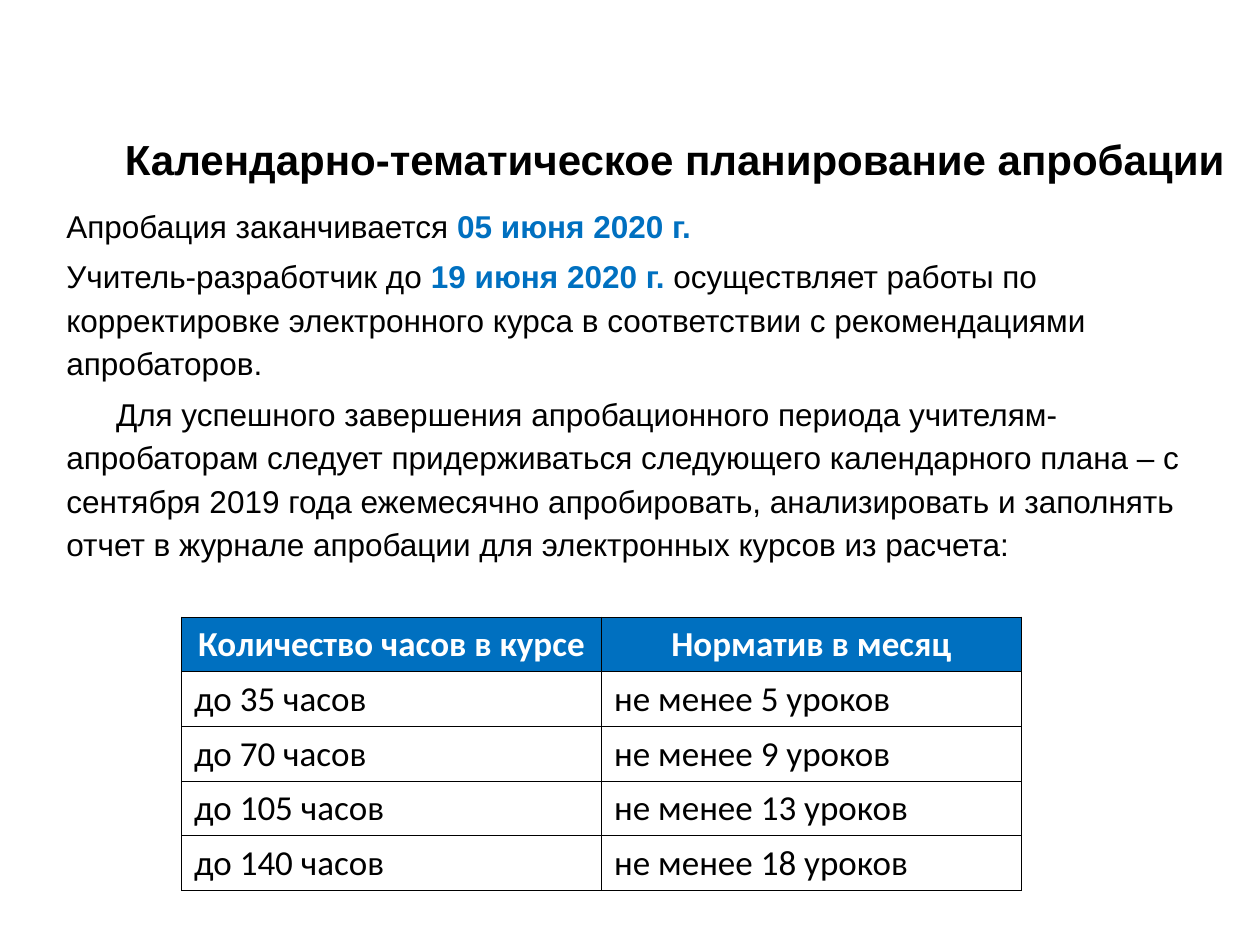
import pptx
import pptx.dml.color
import pptx.enum.text
import pptx.oxml.ns
import pptx.util
from dataclasses import dataclass
from lxml import etree

Cm, Pt = pptx.util.Cm, pptx.util.Pt
Align = pptx.enum.text.PP_ALIGN
Anchor = pptx.enum.text.MSO_ANCHOR


@dataclass(frozen=True)
class Theme:
    ink: str = "000000"
    blue: str = "0070C0"
    white: str = "FFFFFF"
    sans: str = "Arial"
    grid: str = "Calibri"
    head: int = 24
    body: int = 18
    cell: int = 20
    thin: float = 0.5
    thick: float = 1


THEME = Theme()
INDENT = Cm(1)

TITLE = "Календарно-тематическое планирование апробации"
# Each paragraph: first-line indent, then (text, is it a date) pieces
BODY = [
    (0, [("Апробация заканчивается ", False), ("05 июня 2020 г.", True)]),
    (0, [("Учитель-разработчик до ", False), ("19 июня 2020 г. ", True),
         ("осуществляет работы по корректировке электронного курса "
          "в соответствии с рекомендациями апробаторов.", False)]),
    (INDENT, [("Для успешного завершения апробационного периода учителям- "
               "апробаторам следует придерживаться следующего календарного "
               "плана – с сентября 2019 года ежемесячно апробировать, "
               "анализировать и заполнять отчет в журнале апробации для "
               "электронных курсов из расчета:", False)]),
]
ROWS = [
    ("Количество часов в курсе", "Норматив в месяц"),
    ("до 35 часов", "не менее 5 уроков"),
    ("до 70 часов", "не менее 9 уроков"),
    ("до 105 часов", "не менее 13 уроков"),
    ("до 140 часов", "не менее 18 уроков"),
]


def rgb(hue):
    return pptx.dml.color.RGBColor.from_string(hue)


def style(run, face, size, hue, bold=False):
    font = run.font
    font.name, font.size, font.bold = face, Pt(size), bold
    font.color.rgb = rgb(hue)


def add_frame(slide, box, pad):
    frame = slide.shapes.add_textbox(*box).text_frame
    frame.word_wrap = True
    frame.margin_top = frame.margin_bottom = pad
    return frame


def set_para(para, indent):
    para._p.get_or_add_pPr().set("indent", str(int(indent)))
    para.line_spacing = 1.15


def add_title(slide, box):
    frame = add_frame(slide, box, Cm(0.13))
    frame.vertical_anchor = Anchor.MIDDLE
    para = frame.paragraphs[0]
    para.text = TITLE
    set_para(para, INDENT)
    para.alignment = Align.CENTER
    style(para.runs[0], THEME.sans, THEME.head, THEME.ink, True)


def add_body(slide, box):
    frame = add_frame(slide, box, 0)
    for i, (indent, parts) in enumerate(BODY):
        para = frame.add_paragraph() if i else frame.paragraphs[0]
        set_para(para, indent)
        if i:
            para.space_before = Pt(4)
        for text, date in parts:
            run = para.add_run()
            run.text = text
            hue = THEME.blue if date else THEME.ink
            style(run, THEME.sans, THEME.body, hue, date)


def set_edges(cell, widths):
    """Draw the cell's borders; widths maps L, R, T and B to points."""
    qn = pptx.oxml.ns.qn
    props = cell._tc.get_or_add_tcPr()
    for side, width in widths.items():
        line = etree.SubElement(props, qn("a:ln" + side), w=str(int(Pt(width))))
        fill = etree.SubElement(line, qn("a:solidFill"))
        etree.SubElement(fill, qn("a:srgbClr"), val=THEME.ink)


def add_grid(slide, box):
    rows, cols = len(ROWS), len(ROWS[0])
    table = slide.shapes.add_table(rows, cols, *box).table
    table.horz_banding = False
    for r, texts in enumerate(ROWS):
        for c, text in enumerate(texts):
            cell = table.cell(r, c)
            set_edges(cell, {
                "L": THEME.thick if c else THEME.thin,
                "R": THEME.thin if c == cols - 1 else THEME.thick,
                "T": THEME.thin,
                "B": THEME.thin,
            })
            top = r == 0
            if top:
                cell.fill.solid()
                cell.fill.fore_color.rgb = rgb(THEME.blue)
            else:
                cell.fill.background()
            para = cell.text_frame.paragraphs[0]
            para.text = text
            para.alignment = Align.CENTER if top else Align.LEFT
            hue = THEME.white if top else THEME.ink
            style(para.runs[0], THEME.grid, THEME.cell, hue, top)


def main():
    deck = pptx.Presentation()
    deck.slide_width, deck.slide_height = Cm(25.4), Cm(19.05)
    slide = deck.slides.add_slide(deck.slide_layouts[6])
    add_title(slide, (Cm(1.19), Cm(2.18), Cm(23.83), Cm(1.9)))
    add_body(slide, (Cm(1.09), Cm(4.06), Cm(23.9), Cm(7.29)))
    add_grid(slide, (Cm(3.66), Cm(12.44), Cm(16.93), Cm(5.5)))
    deck.save("out.pptx")


if __name__ == "__main__":
    main()
